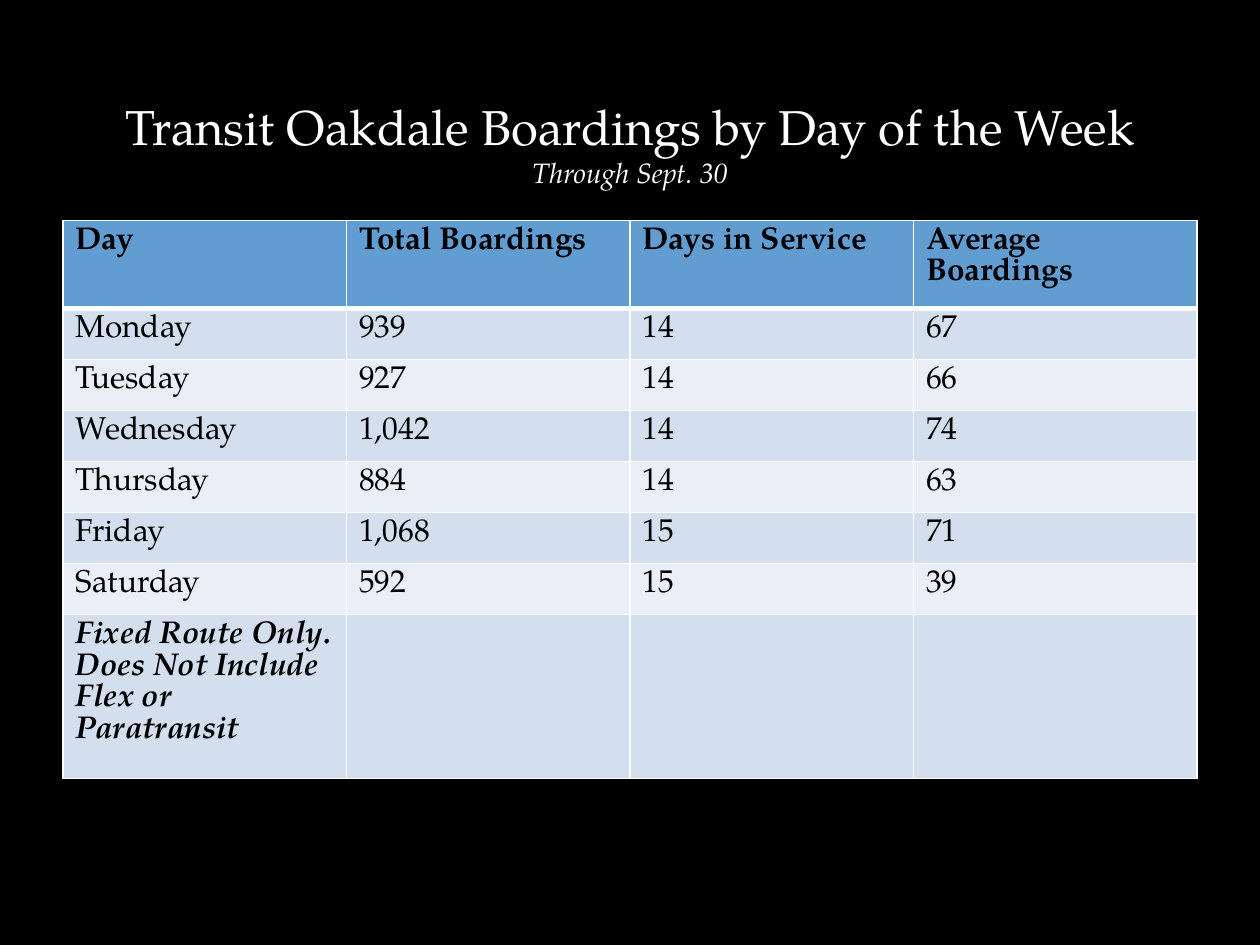
from lxml import etree
from pptx import Presentation
from pptx.dml.color import RGBColor
from pptx.enum.text import MSO_ANCHOR, PP_ALIGN
from pptx.oxml.ns import qn
from pptx.util import Inches, Pt

CENTER = PP_ALIGN.CENTER
BOTTOM = MSO_ANCHOR.BOTTOM

FONT = "TeX Gyre Pagella"
BLACK = RGBColor(0x00, 0x00, 0x00)
WHITE = RGBColor(0xFF, 0xFF, 0xFF)
HEADER_BLUE = RGBColor(0x62, 0x9D, 0xD1)
BAND_DARK = RGBColor(0xD3, 0xDF, 0xEE)
BAND_LIGHT = RGBColor(0xEA, 0xEF, 0xF7)

BOARDINGS = [
    ("Day", "Total Boardings", "Days in Service", "Average Boardings"),
    ("Monday", "939", "14", "67"),
    ("Tuesday", "927", "14", "66"),
    ("Wednesday", "1,042", "14", "74"),
    ("Thursday", "884", "14", "63"),
    ("Friday", "1,068", "15", "71"),
    ("Saturday", "592", "15", "39"),
    ("Fixed Route Only. Does Not Include Flex or Paratransit", "", "", ""),
]


def add_text(paragraph, text, size=18, color=BLACK, bold=False, italic=False):
    run = paragraph.add_run()
    run.text = text
    font = run.font
    font.name = FONT
    font.size = Pt(size)
    font.color.rgb = color
    font.bold = bold
    font.italic = italic


def add_title(slide):
    title = slide.shapes.add_textbox(Inches(0.5), Inches(0.3), Inches(9), Inches(1.25))
    frame = title.text_frame
    frame.word_wrap = True
    frame.vertical_anchor = BOTTOM
    heading = frame.paragraphs[0]
    heading.alignment = CENTER
    add_text(heading, "Transit Oakdale Boardings by Day of the Week", size=28, color=WHITE)
    heading.add_line_break()
    add_text(heading, "Through Sept. 30", size=16, color=WHITE, italic=True)


def add_borders(cell, top=1, bottom=1):
    """Draw white borders; call before the fill, which must follow them in the XML."""
    properties = cell._tc.get_or_add_tcPr()
    for side, width in (("L", 1), ("R", 1), ("T", top), ("B", bottom)):
        line = etree.SubElement(properties, qn(f"a:ln{side}"), w=str(Pt(width)))
        fill = etree.SubElement(line, qn("a:solidFill"))
        etree.SubElement(fill, qn("a:srgbClr"), val=str(WHITE))


def add_boardings_table(slide):
    table_frame = slide.shapes.add_table(
        len(BOARDINGS), len(BOARDINGS[0]),
        Inches(0.5), Inches(1.75), Inches(9), Inches(3.24),
    )
    # Rows keep their minimum height; the frame leaves room for wrapped text.
    table_frame.height = Inches(4.43)
    table = table_frame.table
    note_row = len(BOARDINGS) - 1
    for row, values in enumerate(BOARDINGS):
        is_header = row == 0
        band = BAND_DARK if row % 2 else BAND_LIGHT
        for column, value in enumerate(values):
            cell = table.cell(row, column)
            add_borders(cell, top=3 if row == 1 else 1, bottom=3 if is_header else 1)
            cell.fill.solid()
            cell.fill.fore_color.rgb = HEADER_BLUE if is_header else band
            if value:
                add_text(cell.text_frame.paragraphs[0], value,
                         bold=row in (0, note_row), italic=row == note_row)


def main():
    presentation = Presentation()
    presentation.slide_width = Inches(10)
    presentation.slide_height = Inches(7.5)
    slide = presentation.slides.add_slide(presentation.slide_layouts[6])
    background = slide.background.fill
    background.solid()
    background.fore_color.rgb = BLACK
    add_title(slide)
    add_boardings_table(slide)
    presentation.save("out.pptx")


if __name__ == "__main__":
    main()
